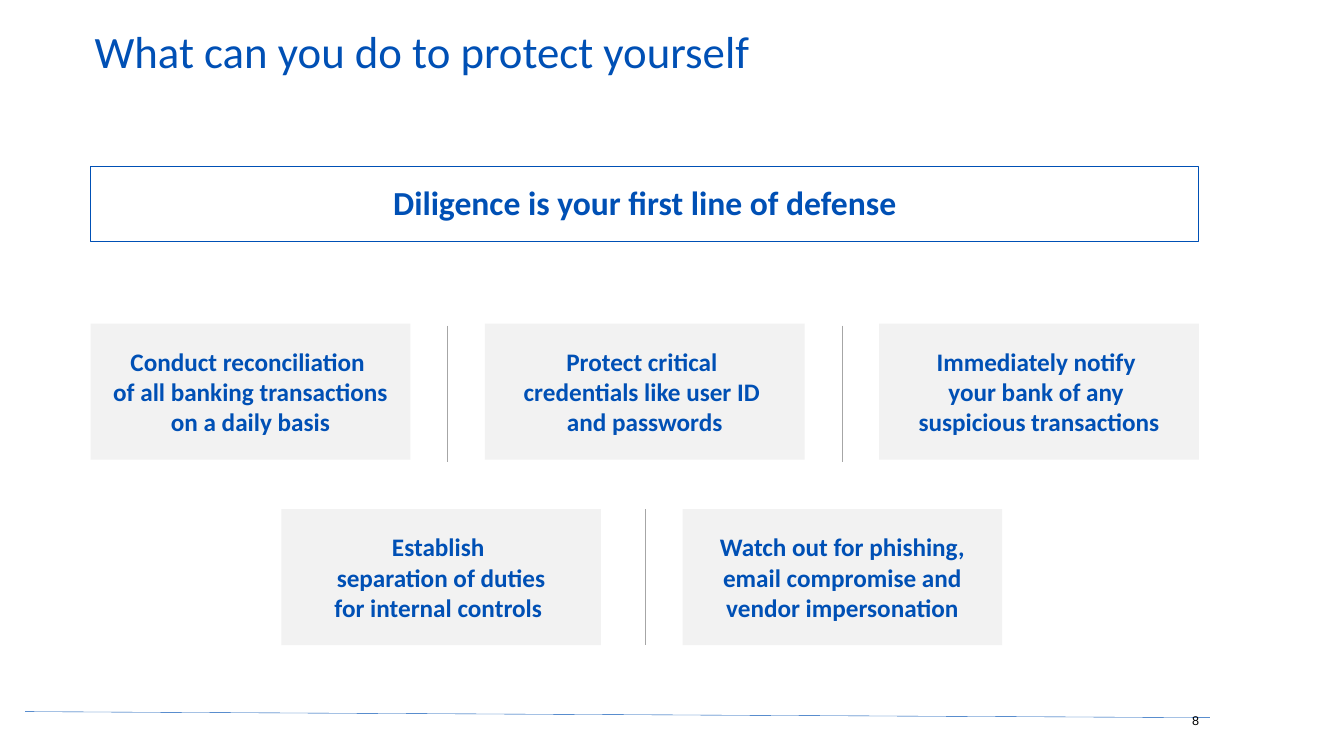
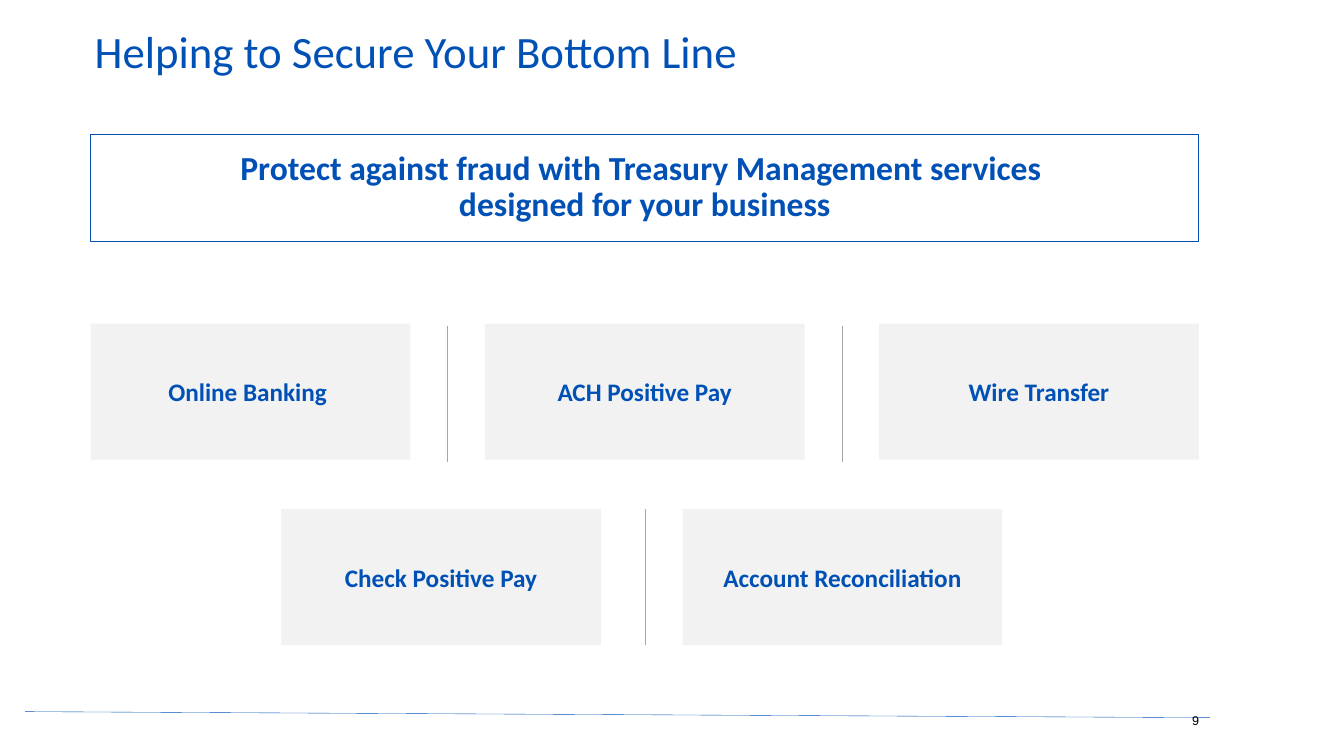
from dataclasses import dataclass

import lxml.etree
import pptx
import pptx.dml.color
import pptx.enum.shapes
import pptx.enum.text
import pptx.oxml.ns
import pptx.presentation
import pptx.shapes.autoshape
import pptx.slide
import pptx.util

PX = 9144
BLUE = pptx.dml.color.RGBColor(0x00, 0x50, 0xB5)
PALE_GREY = pptx.dml.color.RGBColor(0xF2, 0xF2, 0xF2)
MID_GREY = pptx.dml.color.RGBColor(0xA6, 0xA6, 0xA6)
BLACK = pptx.dml.color.RGBColor(0x00, 0x00, 0x00)

CENTER = pptx.enum.text.PP_ALIGN.CENTER
LEFT = pptx.enum.text.PP_ALIGN.LEFT
TOP = pptx.enum.text.MSO_ANCHOR.TOP
MIDDLE = pptx.enum.text.MSO_ANCHOR.MIDDLE
BOTTOM = pptx.enum.text.MSO_ANCHOR.BOTTOM

TILE_WIDTH = 317
TILE_HEIGHT = 135
BANNER_LEFT = 90
BANNER_WIDTH = 1099
BANNER_BOTTOM = 240


@dataclass(frozen=True)
class Area:
    left: int
    top: int
    width: int
    height: int

    def emu(self) -> tuple[int, int, int, int]:
        return self.left * PX, self.top * PX, self.width * PX, self.height * PX


@dataclass(frozen=True)
class TextStyle:
    size: int
    color: pptx.dml.color.RGBColor = BLUE
    font: str = "Calibri"
    bold: bool = False
    align: pptx.enum.text.PP_ALIGN = CENTER
    anchor: pptx.enum.text.MSO_ANCHOR = MIDDLE
    line_spacing: float = 1.0


@dataclass(frozen=True)
class TileRow:
    left: int
    top: int
    step: int
    count: int
    divider_left: int
    divider_top: int


@dataclass(frozen=True)
class Page:
    number: int
    title: str
    banner: str
    banner_top: int
    tiles: tuple[str, ...]


TITLE_AREA = Area(84, 25, 1150, 61)
NUMBER_AREA = Area(1163, 698, 46, 29)
TITLE_STYLE = TextStyle(32, align=LEFT, anchor=TOP, line_spacing=0.9)
BANNER_STYLE = TextStyle(24, bold=True, line_spacing=0.9)
TILE_STYLE = TextStyle(18, bold=True)
NUMBER_STYLE = TextStyle(9, color=BLACK, font="Arial", anchor=BOTTOM)

TILE_ROWS = (
    TileRow(left=90, top=321, step=391, count=3, divider_left=444, divider_top=323),
    TileRow(left=279, top=505, step=398, count=2, divider_left=640, divider_top=505),
)

PAGES = (
    Page(
        number=8,
        title="What can you do to protect yourself",
        banner="Diligence is your first line of defense",
        banner_top=165,
        tiles=(
            "Conduct reconciliation \nof all banking transactions on a daily basis",
            "Protect critical \ncredentials like user ID \nand passwords",
            "Immediately notify \nyour bank of any \nsuspicious transactions",
            "Establish \nseparation of duties\nfor internal controls ",
            "Watch out for phishing, email compromise and\nvendor impersonation",
        ),
    ),
    Page(
        number=9,
        title="Helping to Secure Your Bottom Line",
        banner="Protect against fraud with Treasury Management services \n"
        "designed for your business",
        banner_top=133,
        tiles=(
            "Online Banking ",
            "ACH Positive Pay",
            "Wire Transfer",
            "Check Positive Pay",
            "Account Reconciliation",
        ),
    ),
)


def write_text(
    box: pptx.shapes.autoshape.Shape, text: str, style: TextStyle
) -> None:
    frame = box.text_frame
    frame.word_wrap = True
    frame.vertical_anchor = style.anchor
    para = frame.paragraphs[0]
    para.text = text
    para.alignment = style.align
    para.line_spacing = style.line_spacing
    para.font.name = style.font
    para.font.size = pptx.util.Pt(style.size)
    para.font.bold = style.bold
    para.font.color.rgb = style.color


def add_label(
    slide: pptx.slide.Slide, area: Area, text: str, style: TextStyle
) -> None:
    write_text(slide.shapes.add_textbox(*area.emu()), text, style)


def add_rectangle(
    slide: pptx.slide.Slide, area: Area, text: str, style: TextStyle
) -> pptx.shapes.autoshape.Shape:
    box = slide.shapes.add_shape(
        pptx.enum.shapes.MSO_SHAPE.RECTANGLE, *area.emu()
    )
    box.shadow.inherit = False
    box.fill.background()
    box.line.fill.background()
    write_text(box, text, style)
    return box


def add_line(
    slide: pptx.slide.Slide,
    start: tuple[int, int],
    end: tuple[int, int],
    color: pptx.dml.color.RGBColor,
) -> None:
    line = slide.shapes.add_connector(
        pptx.enum.shapes.MSO_CONNECTOR.STRAIGHT,
        start[0] * PX,
        start[1] * PX,
        end[0] * PX,
        end[1] * PX,
    )
    line.line.color.rgb = color
    line.line.width = pptx.util.Pt(0.25)
    properties = line.element.find(pptx.oxml.ns.qn("p:spPr"))
    lxml.etree.SubElement(properties, pptx.oxml.ns.qn("a:effectLst"))


def add_banner(slide: pptx.slide.Slide, text: str, top: int) -> None:
    area = Area(BANNER_LEFT, top, BANNER_WIDTH, BANNER_BOTTOM - top)
    banner = add_rectangle(slide, area, text, BANNER_STYLE)
    banner.line.color.rgb = BLUE
    banner.line.width = pptx.util.Pt(0.75)


def add_tile_row(
    slide: pptx.slide.Slide, row: TileRow, texts: tuple[str, ...]
) -> None:
    for index, text in enumerate(texts):
        area = Area(row.left + index * row.step, row.top, TILE_WIDTH, TILE_HEIGHT)
        tile = add_rectangle(slide, area, text, TILE_STYLE)
        tile.fill.solid()
        tile.fill.fore_color.rgb = PALE_GREY
    for index in range(row.count - 1):
        left = row.divider_left + index * row.step
        bottom = row.divider_top + TILE_HEIGHT
        add_line(slide, (left, row.divider_top), (left, bottom), MID_GREY)


def add_page(deck: pptx.presentation.Presentation, page: Page) -> None:
    slide = deck.slides.add_slide(deck.slide_layouts[6])
    add_line(slide, (1200, 712), (25, 706), BLUE)
    add_label(slide, NUMBER_AREA, str(page.number), NUMBER_STYLE)
    add_label(slide, TITLE_AREA, page.title, TITLE_STYLE)
    add_banner(slide, page.banner, page.banner_top)
    first = 0
    for row in TILE_ROWS:
        add_tile_row(slide, row, page.tiles[first:first + row.count])
        first += row.count


def main() -> None:
    deck = pptx.Presentation()
    deck.slide_width = 1333 * PX
    deck.slide_height = 750 * PX
    for page in PAGES:
        add_page(deck, page)
    deck.save("out.pptx")


if __name__ == "__main__":
    main()
